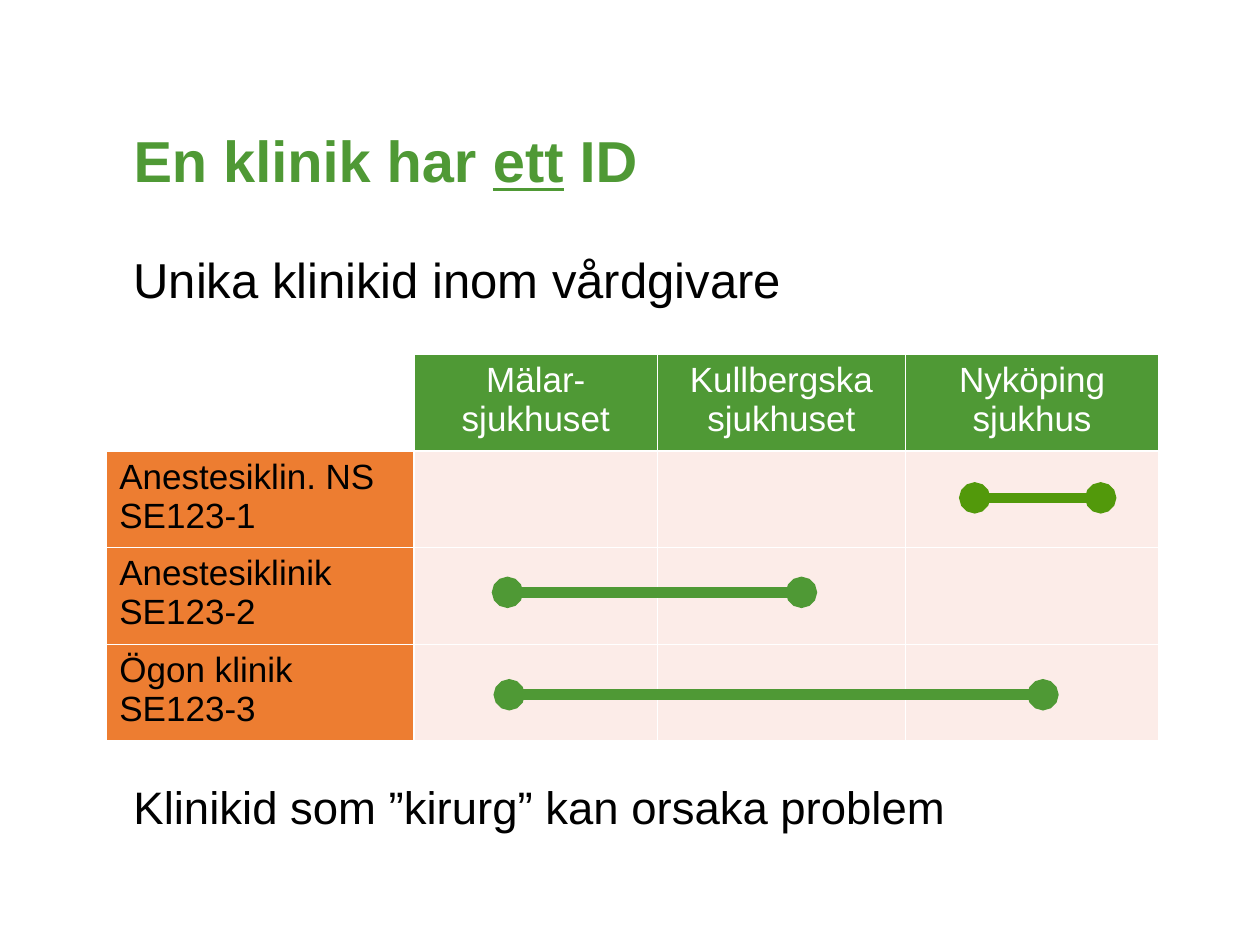
from lxml import etree
from pptx import Presentation
from pptx.dml.color import RGBColor
from pptx.enum.shapes import MSO_CONNECTOR
from pptx.enum.text import MSO_ANCHOR, PP_ALIGN
from pptx.oxml.ns import qn
from pptx.util import Pt

LEFT, CENTER = PP_ALIGN.LEFT, PP_ALIGN.CENTER
TOP, BOTTOM = MSO_ANCHOR.TOP, MSO_ANCHOR.BOTTOM
STRAIGHT = MSO_CONNECTOR.STRAIGHT
FONT = "Arial"
COLORS = {
    "green": "4F9935", "lime": "52990B", "orange": "ED7D31",
    "pink": "FCECE8", "white": "FFFFFF", "black": "000000",
}

HEADS = ["", "Mälar-sjukhuset", "Kullbergska\nsjukhuset", "Nyköping\nsjukhus"]
CLINICS = ["Anestesiklin. NS\nSE123-1", "Anestesiklinik\nSE123-2",
           "Ögon klinik\nSE123-3"]
COLS = [175.7, 139, 141.8, 144.7]
ROW = 54
# Start x, end x and y inside the table, then colour
SPANS = [(229, 397, 136, "green"), (496, 568, 82, "lime"),
         (230, 535, 194.5, "green")]


def color(name):
    return RGBColor.from_string(COLORS[name])


def style(para, size, name, align=LEFT, bold=False):
    para.alignment = align
    font = para.font
    font.name, font.size, font.bold = FONT, Pt(size), bold
    font.color.rgb = color(name)


def set_frame(frame, anchor):
    frame.word_wrap = True
    frame.vertical_anchor = anchor
    frame.margin_left = frame.margin_right = 0
    frame.margin_top = frame.margin_bottom = 0


def add_title(slide, x, y, w, h):
    title = slide.shapes.title
    title.left, title.top, title.width, title.height = map(Pt, (x, y, w, h))
    set_frame(title.text_frame, BOTTOM)
    para = title.text_frame.paragraphs[0]
    for text in ("En klinik har ", "ett", " ID"):
        run = para.add_run()
        run.text = text
        run.font.underline = text == "ett"
    style(para, 33, "green", bold=True)


def add_note(slide, text, size, x, y, w, h):
    box = slide.shapes.add_textbox(Pt(x), Pt(y), Pt(w), Pt(h))
    set_frame(box.text_frame, TOP)
    box.text_frame.text = text
    style(box.text_frame.paragraphs[0], size, "black")


def set_edges(cell):
    props = cell._tc.get_or_add_tcPr()
    for i, side in enumerate(("lnL", "lnR", "lnT", "lnB")):
        edge = etree.Element(qn("a:" + side), w=str(Pt(1)))
        fill = etree.SubElement(edge, qn("a:solidFill"))
        etree.SubElement(fill, qn("a:srgbClr"), val=COLORS["white"])
        props.insert(i, edge)


def set_cell(cell, text, fill, ink, align):
    if fill:
        cell.fill.solid()
        cell.fill.fore_color.rgb = color(fill)
    else:
        cell.fill.background()
    set_edges(cell)
    cell.text = text
    for para in cell.text_frame.paragraphs:
        style(para, 20, ink, align)


def add_grid(slide, x, y):
    rows = [HEADS] + [[name, "", "", ""] for name in CLINICS]
    table = slide.shapes.add_table(
        len(rows), len(COLS), Pt(x), Pt(y),
        Pt(sum(COLS)), Pt(ROW * len(rows))).table
    for col, width in zip(table.columns, COLS):
        col.width = Pt(width)
    for r, texts in enumerate(rows):
        table.rows[r].height = Pt(ROW)
        for c, text in enumerate(texts):
            if r == 0:
                look = ("green" if c else None, "white", CENTER)
            else:
                look = ("pink" if c else "orange", "black", LEFT)
            set_cell(table.cell(r, c), text, *look)


def add_spans(slide, x, y):
    for start, end, drop, name in SPANS:
        line = slide.shapes.add_connector(
            STRAIGHT, Pt(x + start), Pt(y + drop), Pt(x + end), Pt(y + drop))
        line.line.width = Pt(6)
        line.line.color.rgb = color(name)
        stroke = line.line._get_or_add_ln()
        for end_tag in ("a:headEnd", "a:tailEnd"):
            etree.SubElement(stroke, qn(end_tag), type="oval")
        etree.SubElement(line._element.spPr, qn("a:effectLst"))


def main():
    deck = Presentation()
    deck.slide_width, deck.slide_height = Pt(720), Pt(540)
    slide = deck.slides.add_slide(deck.slide_layouts[5])
    # Title and notes
    add_title(slide, 76.3, 43.2, 568, 68)
    add_note(slide, "Unika klinikid inom vårdgivare", 28, 76.3, 142.5, 568, 34)
    add_note(slide, "Klinikid som ”kirurg” kan orsaka problem", 26,
             76.3, 445, 568, 32)
    # Clinics by hospital
    add_grid(slide, 61, 202.5)
    add_spans(slide, 61, 202.5)
    deck.save("out.pptx")


if __name__ == "__main__":
    main()
